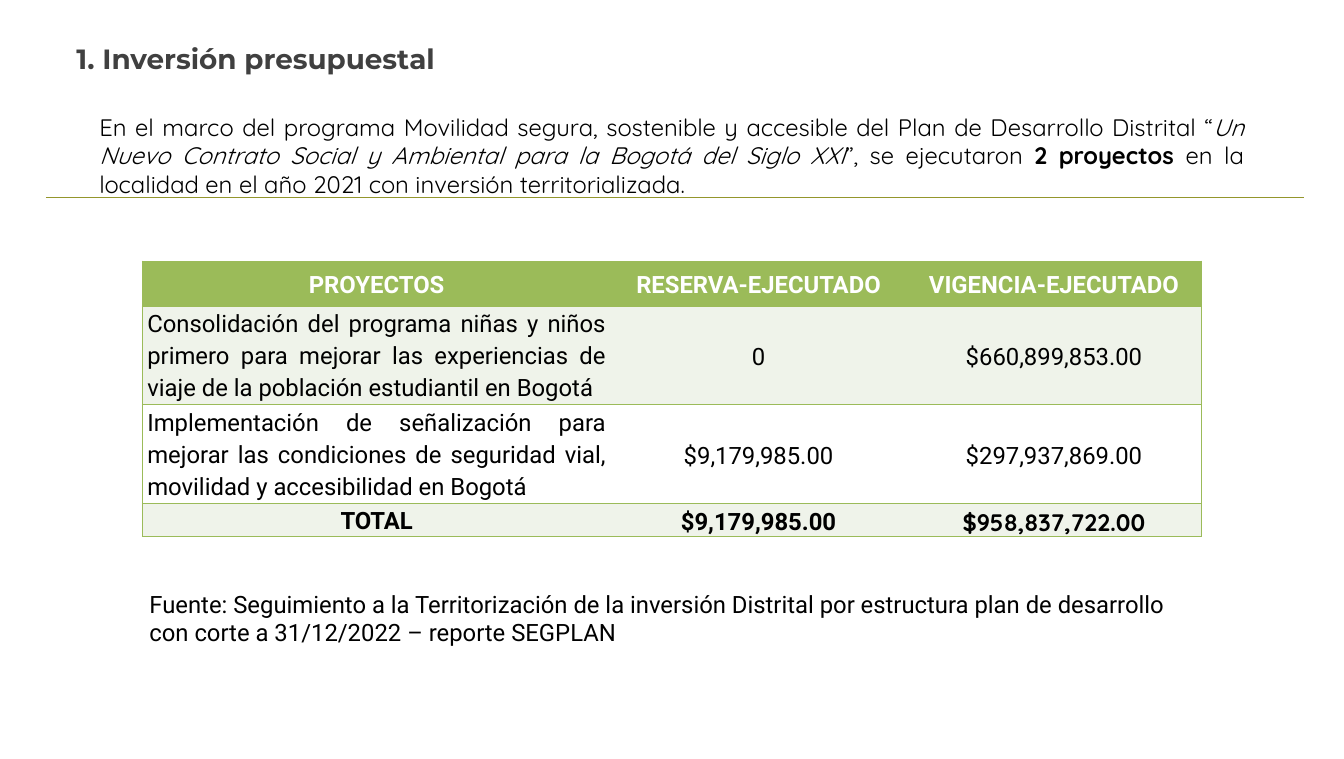
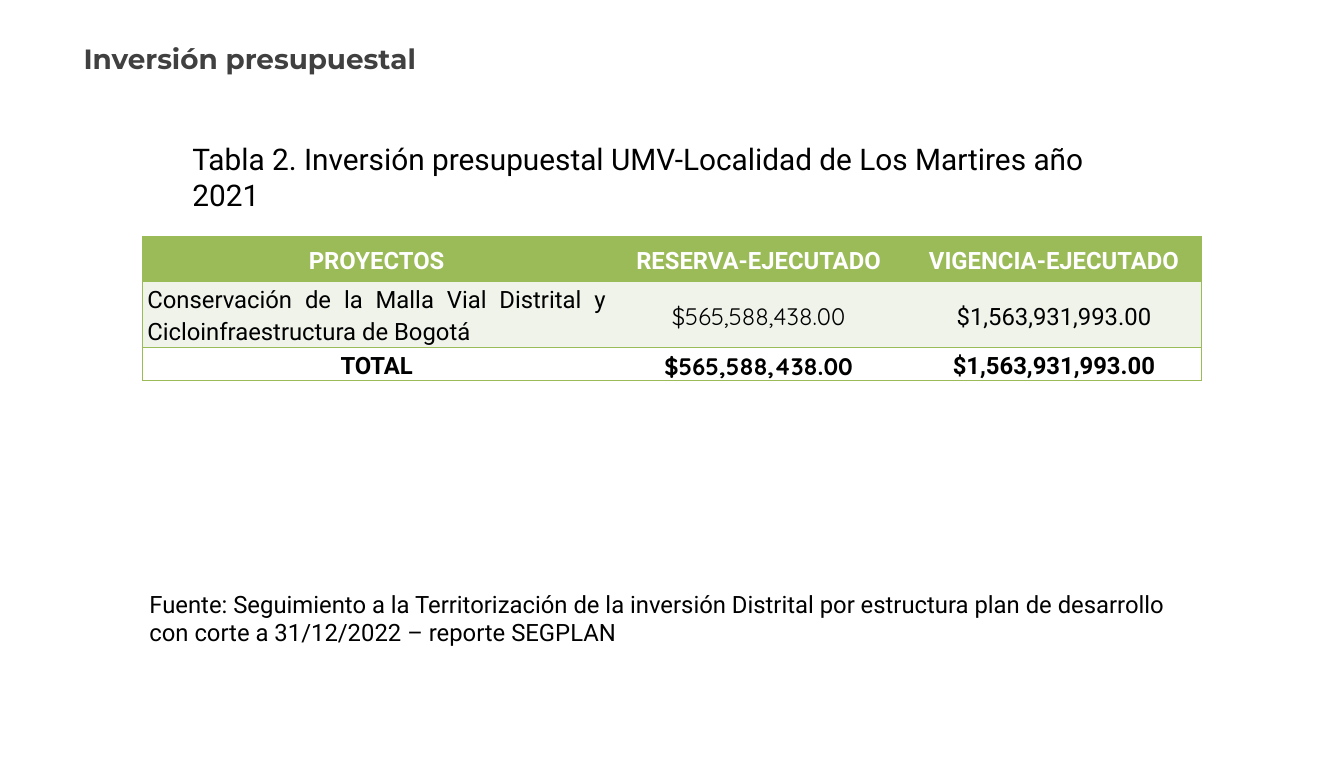
from lxml.etree import SubElement
from pptx import Presentation
from pptx.dml.color import RGBColor
from pptx.enum.shapes import MSO_CONNECTOR
from pptx.enum.text import MSO_ANCHOR, PP_ALIGN
from pptx.oxml.ns import qn
from pptx.util import Inches, Pt

COLORS = {
    "text": "000000",
    "title": "404040",
    "rule": "94962C",
    "green": "9BBB59",
    "band": "EFF3EA",
    "white": "FFFFFF",
}
TITLE_FONT, BODY_FONT, ACCENT_FONT = "Montserrat", "Roboto", "Quicksand"
MARGIN, COLUMNS = 1.99, (6.55, 4.13, 4.13)
HEADINGS = ("PROYECTOS", "RESERVA-EJECUTADO", "VIGENCIA-EJECUTADO")
SOURCE = (
    "Fuente: Seguimiento a la Territorización de la inversión Distrital por "
    "estructura plan de desarrollo con corte a 31/12/2022 – reporte SEGPLAN"
)


def write(frame, text, size=24, font=BODY_FONT, color="text", bold=False,
          align=PP_ALIGN.LEFT, line_spacing=None, space_after=None):
    frame.word_wrap = True
    paragraph = frame.paragraphs[0]
    paragraph.alignment = align
    paragraph.line_spacing = line_spacing
    paragraph.space_after = space_after
    pieces = [(text, "")] if isinstance(text, str) else text
    for piece, emphasis in pieces:
        run = paragraph.add_run()
        run.text = piece
        run.font.name = font
        run.font.size = Pt(size)
        run.font.bold = bold or emphasis == "bold"
        run.font.italic = emphasis == "italic"
        run.font.color.rgb = RGBColor.from_string(COLORS[color])


def add_label(slide, left, top, width, height, text, **style):
    label = slide.shapes.add_textbox(
        Inches(left), Inches(top), Inches(width), Inches(height))
    write(label.text_frame, text, **style)


budgets = [
    {
        "title": "1. Inversión presupuestal",
        "title_left": 0.97,
        "top": 3.65,
        "heights": (0.63, 1.28, 1.28, 0.33),
        "accents": {(3, 2)},
        "rows": [
            ("Consolidación del programa niñas y niños primero para mejorar las "
             "experiencias de viaje de la población estudiantil en Bogotá",
             "0", "$660,899,853.00"),
            ("Implementación de señalización para mejorar las condiciones de "
             "seguridad vial, movilidad y accesibilidad en Bogotá",
             "$9,179,985.00", "$297,937,869.00"),
            ("TOTAL", "$9,179,985.00", "$958,837,722.00"),
        ],
    },
    {
        "title": "Inversión presupuestal",
        "title_left": 1.07,
        "top": 3.31,
        "heights": (0.63, 0.9, 0.33),
        "accents": {(1, 1), (2, 1)},
        "rows": [
            ("Conservación de la Malla Vial Distrital y Cicloinfraestructura de Bogotá",
             "$565,588,438.00", "$1,563,931,993.00"),
            ("TOTAL", "$565,588,438.00", "$1,563,931,993.00"),
        ],
    },
]

deck = Presentation()
deck.slide_width, deck.slide_height = Inches(18.79), Inches(10.61)
slides = []

for budget in budgets:
    slide = deck.slides.add_slide(deck.slide_layouts[6])
    slides.append(slide)
    add_label(slide, budget["title_left"], 0.53, 11.5, 0.57, budget["title"],
              size=28, font=TITLE_FONT, color="title", bold=True)

    rows = [HEADINGS] + budget["rows"]
    table = slide.shapes.add_table(
        len(rows), len(COLUMNS), Inches(MARGIN), Inches(budget["top"]),
        Inches(sum(COLUMNS)), Inches(sum(budget["heights"]))).table
    table.first_row = table.horz_banding = False
    for column, width in zip(table.columns, COLUMNS):
        column.width = Inches(width)

    for r, (row, height) in enumerate(zip(rows, budget["heights"])):
        table.rows[r].height = Inches(height)
        heading, total = r == 0, r == len(rows) - 1
        fill = "green" if heading else "band" if r % 2 else "white"
        for c, text in enumerate(row):
            cell = table.cell(r, c)
            project = c == 0 and not heading
            cell.margin_left = cell.margin_right = Inches(0.07)
            cell.margin_top = cell.margin_bottom = 0
            cell.vertical_anchor = MSO_ANCHOR.TOP if project else MSO_ANCHOR.MIDDLE
            write(cell.text_frame, text,
                  font=ACCENT_FONT if (r, c) in budget["accents"] else BODY_FONT,
                  color="white" if heading else "text",
                  bold=heading or total,
                  align=PP_ALIGN.JUSTIFY if project and not total else PP_ALIGN.CENTER,
                  line_spacing=1.15, space_after=Pt(10))

            properties = cell._tc.get_or_add_tcPr()
            edges = {"L": c == 0, "R": c == len(row) - 1, "T": True, "B": True}
            for side, visible in edges.items():
                border = SubElement(properties, qn(f"a:ln{side}"), w=str(Pt(1)))
                if visible:
                    paint = SubElement(border, qn("a:solidFill"))
                    SubElement(paint, qn("a:srgbClr"), val=COLORS["green"])
                else:
                    SubElement(border, qn("a:noFill"))
            cell.fill.solid()
            cell.fill.fore_color.rgb = RGBColor.from_string(COLORS[fill])

    add_label(slide, MARGIN, 8.19, 14.8, 0.91, SOURCE)

program_slide, maintenance_slide = slides
add_label(program_slide, 1.29, 1.52, 16.2, 1.31, [
    ("En el marco del programa Movilidad segura, sostenible y accesible del "
     "Plan de Desarrollo Distrital “", ""),
    ("Un Nuevo Contrato Social y Ambiental para la Bogotá del Siglo XXI", "italic"),
    ("”, se ejecutaron ", ""),
    ("2 proyectos ", "bold"),
    ("en la localidad en el año 2021 con inversión territorializada.", ""),
], font=ACCENT_FONT, align=PP_ALIGN.JUSTIFY)

divider = program_slide.shapes.add_connector(
    MSO_CONNECTOR.STRAIGHT, Inches(0.64), Inches(2.76), Inches(18.23), Inches(2.76))
divider.line.color.rgb = RGBColor.from_string(COLORS["rule"])
divider.line.width = Pt(0.75)
SubElement(divider._element.spPr, qn("a:effectLst"))

add_label(maintenance_slide, 2.59, 1.92, 13.55, 0.61,
          "Tabla 2. Inversión presupuestal UMV-Localidad de Los Martires año 2021",
          size=30)

deck.save("out.pptx")
